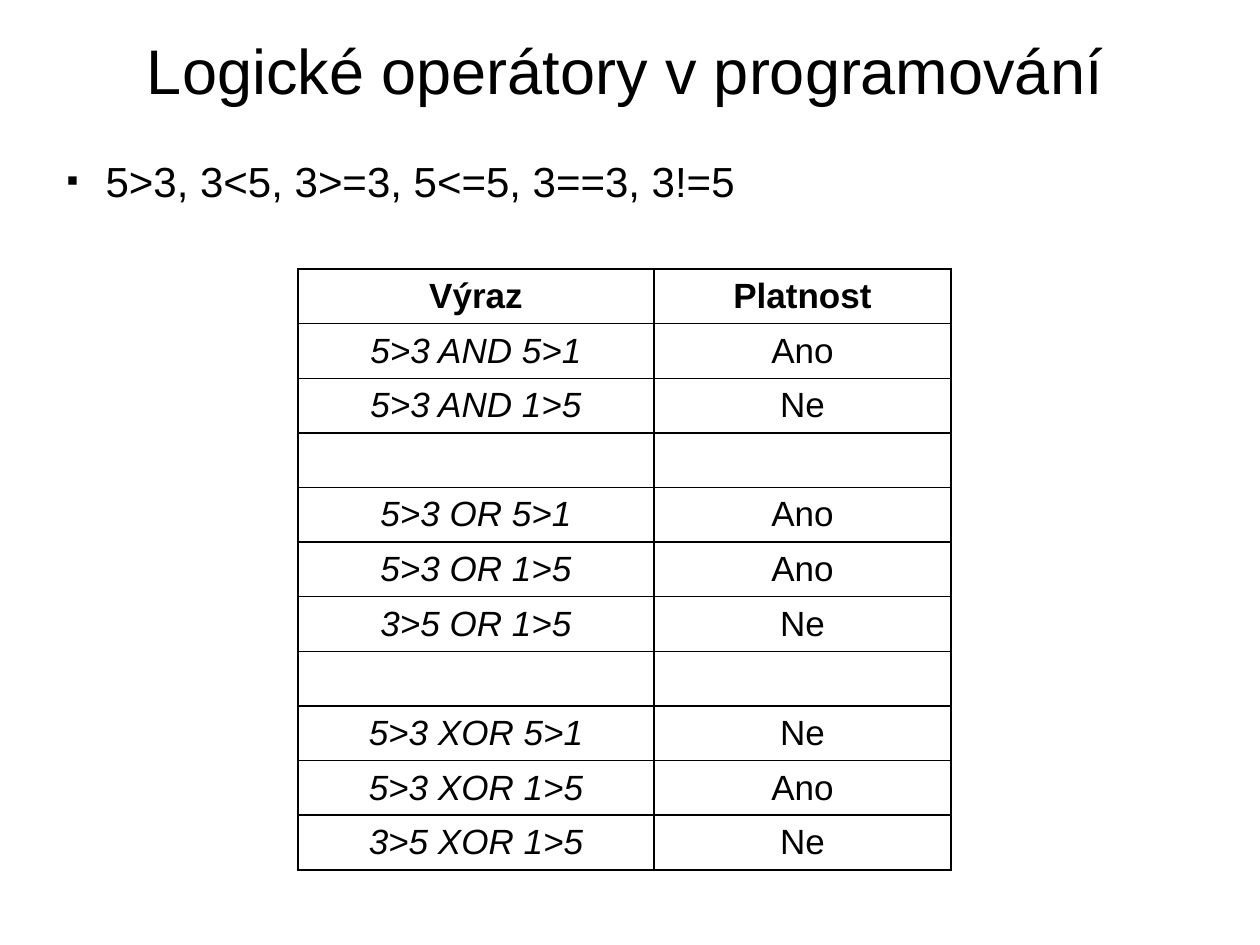
from pptx import Presentation
from pptx.dml.color import RGBColor
from pptx.enum.text import MSO_ANCHOR, MSO_AUTO_SIZE, PP_ALIGN
from pptx.oxml.ns import qn
from pptx.util import Emu, Pt
from lxml.etree import SubElement

BLACK = RGBColor(0, 0, 0)
ROWS = [
    ("Výraz", "Platnost"),
    ("5>3 AND 5>1", "Ano"),
    ("5>3 AND 1>5", "Ne"),
    ("", ""),
    ("5>3 OR 5>1", "Ano"),
    ("5>3 OR 1>5", "Ano"),
    ("3>5 OR 1>5", "Ne"),
    ("", ""),
    ("5>3 XOR 5>1", "Ne"),
    ("5>3 XOR 1>5", "Ano"),
    ("3>5 XOR 1>5", "Ne"),
]


def px(num):
    return Emu(round(num * 914400 / 126))


class Deck:
    font = "Arial"
    color = BLACK

    def __init__(self):
        self.prs = Presentation()
        self.prs.slide_width, self.prs.slide_height = px(1260), px(945)
        self.slide = self.prs.slides.add_slide(self.prs.slide_layouts[1])

    def style(self, para, size, bold=False, italic=False):
        for run in para.runs:
            font = run.font
            font.name, font.size = self.font, Pt(size)
            font.bold, font.italic = bold, italic
            font.color.rgb = self.color

    def place(self, shape, box):
        shape.left, shape.top, shape.width, shape.height = map(px, box)
        frame = shape.text_frame
        frame.auto_size = MSO_AUTO_SIZE.NONE
        frame.word_wrap = True
        return frame

    def title(self, text, box):
        frame = self.place(self.slide.shapes.title, box)
        frame.text = text
        frame.vertical_anchor = MSO_ANCHOR.MIDDLE
        para = frame.paragraphs[0]
        para.alignment = PP_ALIGN.CENTER
        para.line_spacing = 0.9
        self.style(para, 36)

    def body(self, text, box):
        frame = self.place(self.slide.placeholders[1], box)
        frame.text = text
        frame.margin_top = 0
        frame.vertical_anchor = MSO_ANCHOR.TOP
        para = frame.paragraphs[0]
        para.space_before = para.space_after = Pt(6)
        self.style(para, 24)
        props = para._p.get_or_add_pPr()
        props.set("marL", str(px(39)))
        props.set("indent", str(-px(39)))
        SubElement(props, qn("a:buSzPct"), val="80000")
        SubElement(props, qn("a:buFont"), typeface=self.font)
        SubElement(props, qn("a:buChar"), char="▪")

    def border(self, cell):
        props = cell._tc.get_or_add_tcPr()
        for side in "LRTB":
            line = SubElement(props, qn(f"a:ln{side}"), w=str(Pt(1)))
            fill = SubElement(line, qn("a:solidFill"))
            SubElement(fill, qn("a:srgbClr"), val=str(self.color))

    def table(self, rows, widths, box):
        frame = self.slide.shapes.add_table(len(rows), len(widths), *map(px, box))
        table = frame.table
        table.first_row = table.horz_banding = False
        for col, width in zip(table.columns, widths):
            col.width = px(width)
        for r, row in enumerate(rows):
            for c, text in enumerate(row):
                cell = table.cell(r, c)
                cell.text = text
                cell.vertical_anchor = MSO_ANCHOR.MIDDLE
                self.border(cell)
                cell.fill.background()
                para = cell.text_frame.paragraphs[0]
                para.alignment = PP_ALIGN.CENTER
                self.style(para, 20, bold=r == 0, italic=r > 0 and c == 0)


def main():
    deck = Deck()
    deck.title("Logické operátory v programování", (94, 26, 1062, 96))
    deck.body("5>3, 3<5, 3>=3, 5<=5, 3==3, 3!=5", (54, 155, 1082, 79))
    deck.table(ROWS, (356, 297), (298, 269, 653, 601))
    deck.prs.save("out.pptx")


if __name__ == "__main__":
    main()
